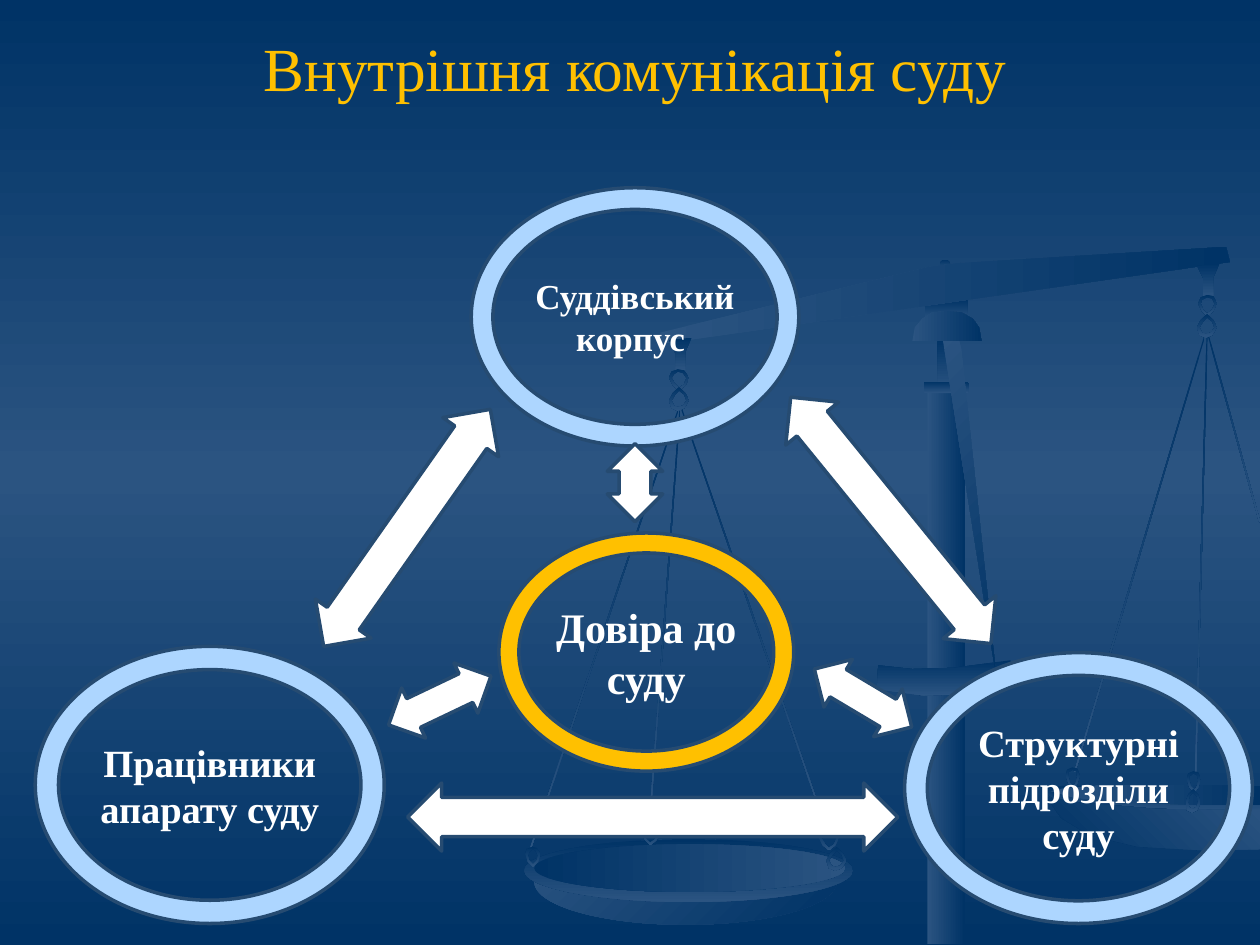
import copy

import pptx
import pptx.dml.color
import pptx.enum.shapes
import pptx.enum.text
import pptx.oxml.ns
import pptx.util

KIND = pptx.enum.shapes.MSO_SHAPE
MID = pptx.enum.text.MSO_ANCHOR.MIDDLE
MITTE = pptx.enum.text.PP_ALIGN.CENTER
hue = pptx.dml.color.RGBColor.from_string
NAVY, STEEL, RIM = "003366", "2B5481", "264B71"
FONT = "Times New Roman"

# Grid of 1000 columns by 750 rows
deck = pptx.Presentation()
cell = pptx.util.Inches(0.01)
deck.slide_width, deck.slide_height = 1000 * cell, 750 * cell
slide = deck.slides.add_slide(deck.slide_layouts[5])
shapes = slide.shapes


def blend(fill, angle, first, last):
    """Fill with a linear gradient; the angle runs clockwise."""
    fill.gradient()
    fill.gradient_angle = -angle % 360
    for stop, tone in zip(fill.gradient_stops, (first, last)):
        stop.color.rgb = hue(tone)


def outline(rings, angle, tones):
    """Draw closed rings of grid points as one shape."""
    pen = shapes.build_freeform(*rings[0][0], scale=cell)
    for i, ring in enumerate(rings):
        if i:
            pen.move_to(*ring[0])
        pen.add_line_segments(ring[1:], close=True)
    part = pen.convert_to_shape()
    part.shadow.inherit = False
    part.line.fill.background()
    blend(part.fill, angle, *tones)


# Background: navy, steel in the middle, navy
blend(slide.background.fill, 90, NAVY, NAVY)
stops = slide.element.find(".//" + pptx.oxml.ns.qn("a:gsLst"))
half = copy.deepcopy(stops[0])
stops.insert(1, half)
half.set("pos", "50000")
slide.background.fill.gradient_stops[1].color.rgb = hue(STEEL)

# Scales of justice
DOWN, UP = (NAVY, STEEL), (STEEL, NAVY)
BASE = [(KIND.RECTANGLE, 734, 237, 34, 18, 0, 90, DOWN),
        (KIND.OVAL, 746, 206, 8, 8, 0, 90, DOWN)]
CORDS = [(904, 260, 360, 16.6), (953, 266, 347, 1.5), (979, 264, 153, 344.6),
         (598, 315, 353, 341), (479, 316, 368, 18.6), (527, 325, 331, 4.2)]
BASE += [(KIND.RECTANGLE, x, y, 1, h, turn, 90, DOWN) for x, y, h, turn in CORDS]
BOWL = [(KIND.OVAL, 424, 666, 240, 68, 0, 45, UP),
        (KIND.OVAL, 416, 666, 261, 50, 0, 90, DOWN),
        (KIND.OVAL, 424, 670, 247, 38, 0, 0, DOWN),
        (KIND.RECTANGLE, 736, 308, 30, 441, 0, 0, UP),
        (KIND.RECTANGLE, 744, 268, 13, 42, 0, 90, DOWN),
        (KIND.ROUNDED_RECTANGLE, 733, 303, 36, 9, 0, 90, DOWN)]
for kind, x, y, w, h, turn, angle, tones in BASE + BOWL:
    part = shapes.add_shape(kind, x * cell, y * cell, w * cell, h * cell)
    part.rotation = turn
    part.shadow.inherit = False
    part.line.fill.background()
    blend(part.fill, angle, *tones)

PARTS = [
    # cross bar
    ([(697, 528), (724, 531), (757, 530), (802, 524), (804, 544), (768, 551),
      (733, 552), (696, 547)], 90, DOWN),
    # right pan: rim, bowl, inside
    ([(958, 624), (875, 623), (836, 624), (827, 628), (837, 634), (863, 639),
      (914, 644), (958, 645), (1000, 645), (1000, 626)], 90, DOWN),
    ([(831, 633), (842, 649), (865, 663), (903, 672), (957, 675), (1000, 674),
      (1000, 643), (918, 642), (857, 637)], 315, UP[::-1]),
    ([(956, 623), (877, 623), (843, 626), (834, 628), (852, 633), (893, 637),
      (955, 639), (1000, 639), (1000, 624)], 0, UP),
    # beam
    ([(973, 196), (976, 208), (525, 273), (524, 264), (737, 212), (759, 209)], 0, UP),
    # ribbon and cap
    ([(791, 539), (750, 280), (748, 268), (760, 265), (763, 277)], 45, UP),
    ([(752, 247), (763, 248), (772, 253), (777, 260), (779, 271), (724, 271),
      (726, 260), (732, 253), (740, 248)], 0, UP),
]
HOOK = [(18, 0), (0, 2), (5, 12), (5, 26), (13, 26), (13, 11)]
for x, y in ((531, 268), (950, 209)):
    PARTS.append(([(x + dx, y + dy) for dx, dy in HOOK], 90, DOWN))
for points, angle, tones in PARTS:
    outline([points], angle, tones)

# Chain links: one drop with a hole, point at the foot (1) or the head (-1)
DROP = [(.5, 1), (.83, .76), (1, .4), (.78, .08), (.45, 0), (.12, .12), (0, .4), (.2, .76)]
LINKS = [(531, 293, 16, 17, 1), (531, 307, 16, 19, -1), (951, 234, 15, 17, 1),
         (950, 249, 16, 19, -1), (846, 609, 11, 17, 1), (942, 612, 11, 17, 1),
         (941, 626, 12, 19, -1), (509, 655, 15, 16, 1), (656, 672, 16, 19, -1),
         (650, 658, 16, 17, 1), (417, 672, 12, 16, 1)]
for x, y, w, h, way in LINKS:
    rings = [[(x + w * (.5 + size * (u - .5)), y + h * (.5 + way * size * (v - .5)))
              for u, v in run]
             for size, run in ((1, DROP), (.72, DROP[::-1]))]
    outline(rings, 90, DOWN)

# Title
title = shapes.title
place = dict(left=54, top=13, width=900, height=80)
for name, value in place.items():
    setattr(title, name, value * cell)
title.text_frame.text = "Внутрішня комунікація суду"
title.text_frame.vertical_anchor = MID
line = title.text_frame.paragraphs[0]
line.alignment = MITTE
look = dict(name=FONT, size=pptx.util.Pt(35))
for name, value in look.items():
    setattr(line.runs[0].font, name, value)
line.runs[0].font.color.rgb = hue("FFC000")

# Rings with text, then arrows between them
SKY, GOLD, WHITE = "ADD6FF", "FFC000", "FFFFFF"
RINGS = [(374, 149, 260, 205, SKY, 20, "Суддівський корпус "),
         (718, 518, 276, 215, SKY, 22, "Структурні підрозділи суду"),
         (28, 513, 277, 220, SKY, 22, "Працівники апарату суду"),
         (396, 423, 234, 189, GOLD, 24, "Довіра до суду")]
ARROWS = [(296, 304, 54, 230, 35.1), (491, 454, 54, 389, 90), (680, 287, 54, 252, 320.9),
          (327, 511, 44, 90, 64.5), (663, 509, 44, 90, 300.8), (482, 352, 44, 62, 0)]
ITEMS = [(KIND.DONUT, *box, 0, (.084,), tone, size, text)
         for *box, tone, size, text in RINGS]
ITEMS += [(KIND.UP_DOWN_ARROW, x, y, w, h, turn, (.505 if w > 50 else .598, .576),
           WHITE, 0, "") for x, y, w, h, turn in ARROWS]
for kind, x, y, w, h, turn, bends, tone, size, text in ITEMS:
    item = shapes.add_shape(kind, x * cell, y * cell, w * cell, h * cell)
    item.rotation = turn
    item.shadow.inherit = False
    for i, bend in enumerate(bends):
        item.adjustments[i] = bend
    item.fill.solid()
    item.fill.fore_color.rgb = hue(tone)
    item.line.color.rgb = hue(RIM)
    item.line.width = pptx.util.Pt(2)
    if text:
        frame = item.text_frame
        frame.text, frame.word_wrap, frame.vertical_anchor = text, True, MID
        line = frame.paragraphs[0]
        line.alignment = MITTE
        look = dict(name=FONT, size=pptx.util.Pt(size), bold=True)
        for name, value in look.items():
            setattr(line.runs[0].font, name, value)
        line.runs[0].font.color.rgb = hue(WHITE)

deck.save("out.pptx")
